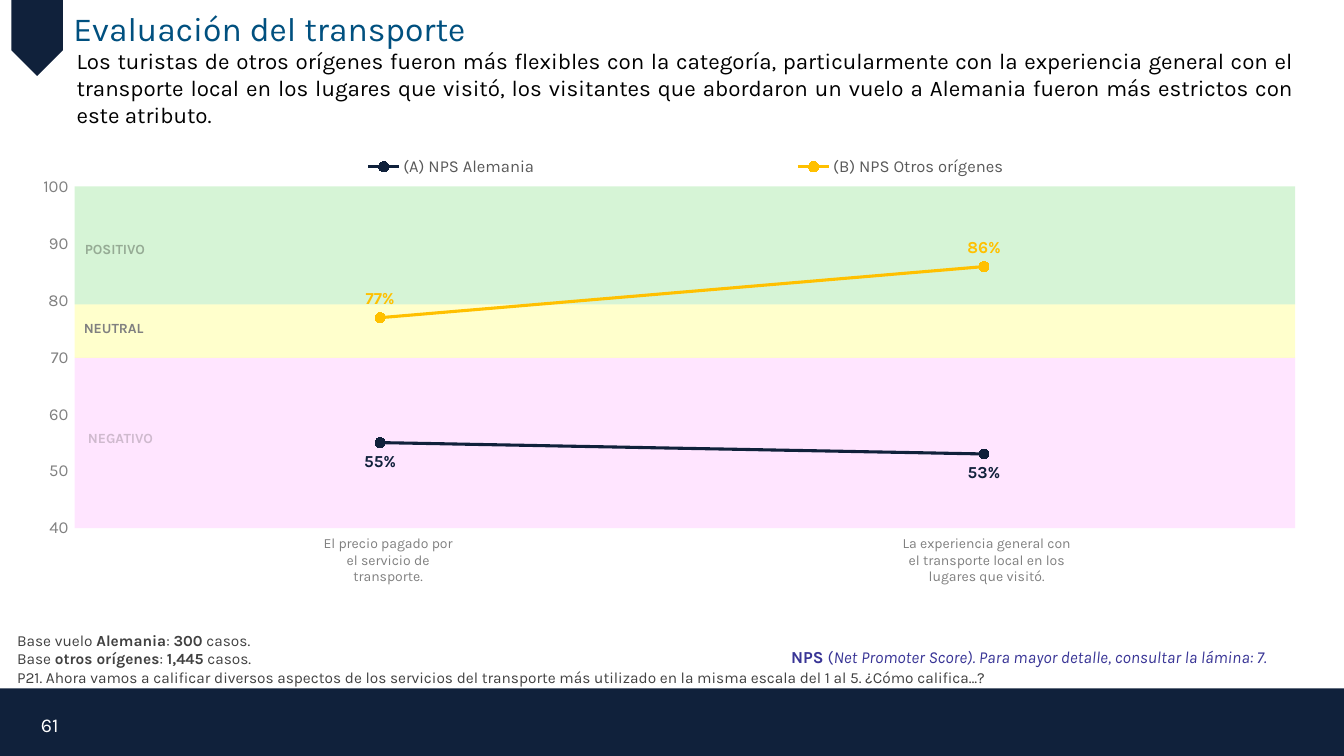
from lxml.etree import SubElement
from pptx import Presentation
from pptx.chart.data import CategoryChartData
from pptx.dml.color import RGBColor
from pptx.enum.chart import XL_CHART_TYPE, XL_LABEL_POSITION, XL_LEGEND_POSITION, XL_MARKER_STYLE, XL_TICK_MARK
from pptx.enum.shapes import MSO_SHAPE
from pptx.enum.text import MSO_ANCHOR, MSO_AUTO_SIZE, PP_ALIGN
from pptx.oxml import parse_xml
from pptx.oxml.ns import nsdecls, qn
from pptx.util import Cm, Pt

FONT = "Karla"
NAVY, GOLD, GRAY = "10213B", "FFC000", "808080"
BAND_LEFT, BAND_WIDTH = 1.88, 30.76
BANDS = [("FFCCFF", 50, 9.02, 4.29), ("FFFF00", 20, 7.67, 1.35), ("33CC33", 20, 4.7, 2.97)]
SERIES = [
    ("(A) NPS Alemania", (55, 53), NAVY, XL_LABEL_POSITION.BELOW),
    ("(B) NPS Otros orígenes", (77, 86), GOLD, XL_LABEL_POSITION.ABOVE),
]
ZONES = [
    ("NEGATIVO", "CFBACE", (1.93, 10.69, 2.21, 0.69), True),
    ("POSITIVO", "96AB95", (1.88, 5.94, 2.03, 0.69), False),
    ("NEUTRAL", GRAY, (1.8, 7.92, 2.13, 0.71), False),
]
ATTRIBUTES = [
    ("La experiencia general con el transporte local en los lugares que visitó.", (22.4, 13.34, 4.93, 1.55)),
    ("El precio pagado por el servicio de transporte.", (7.75, 13.34, 4.06, 1.55)),
]
SUMMARY = (
    "Los turistas de otros orígenes fueron más flexibles con la categoría, particularmente con la "
    "experiencia general con el transporte local en los lugares que visitó, los visitantes que "
    "abordaron un vuelo a Alemania fueron más estrictos con este atributo."
)
QUESTION = (
    "P21. Ahora vamos a calificar diversos aspectos de los servicios del transporte más utilizado "
    "en la misma escala del 1 al 5. ¿Cómo califica…?"
)


def color(code):
    """Return the colour for a hex string."""
    return RGBColor.from_string(code)


def style_font(font, size, code, bold=False, italic=False):
    """Apply the slide's typeface with a size, colour and emphasis."""
    font.name, font.size, font.bold, font.italic = FONT, Pt(size), bold, italic
    font.color.rgb = color(code)


def add_block(page, kind, place, code, opacity=100):
    """Add a filled shape without outline, optionally see-through."""
    block = page.shapes.add_shape(kind, *map(Cm, place))
    block.shadow.inherit = False
    block.fill.solid()
    block.fill.fore_color.rgb = color(code)
    block.line.fill.background()
    if opacity < 100:
        tint = block.fill._xPr.find(qn("a:solidFill"))[0]
        SubElement(tint, qn("a:alpha")).set("val", str(opacity * 1000))
    return block


def add_text(page, place, paragraphs, size, code, align=PP_ALIGN.LEFT, wrap=True):
    """Add a text box from paragraphs made of (text, emphasis) pairs."""
    box = page.shapes.add_textbox(*map(Cm, place))
    frame = box.text_frame
    frame.word_wrap = wrap
    frame.auto_size = MSO_AUTO_SIZE.SHAPE_TO_FIT_TEXT
    for index, pieces in enumerate(paragraphs):
        para = frame.add_paragraph() if index else frame.paragraphs[0]
        para.alignment = align
        for text, emphasis in pieces:
            span = para.add_run()
            span.text = text
            style_font(span.font, size, code, "b" in emphasis, "i" in emphasis)
    return box


def base_line(group, cases):
    """Return the pieces of a sample size note."""
    return [("Base ", ""), (group, "b"), (": ", ""), (cases, "b"), (" casos.", "")]


def place_chart_part(part, index, x, y, w, h, inner=False):
    """Fix the position of a chart part as fractions of the chart."""
    for layout in part.findall(qn("c:layout")):
        part.remove(layout)
    target = '<c:layoutTarget val="inner"/>' if inner else ""
    sizes = "".join(f'<c:{name} val="{value}"/>' for name, value in zip("xywh", (x, y, w, h)))
    part.insert(index, parse_xml(
        f'<c:layout {nsdecls("c")}><c:manualLayout>{target}<c:xMode val="edge"/>'
        f'<c:yMode val="edge"/>{sizes}</c:manualLayout></c:layout>'
    ))


def no_fill():
    """Return chart properties without fill or outline."""
    return parse_xml(f'<c:spPr {nsdecls("c", "a")}><a:noFill/><a:ln><a:noFill/></a:ln></c:spPr>')


def style_series(series, code, position):
    """Format the line, markers and labels of one series."""
    series.smooth = True
    series.format.line.width = Pt(2.25)
    series.format.line.color.rgb = color(code)
    marker = series.marker
    marker.style, marker.size = XL_MARKER_STYLE.CIRCLE, 7
    marker.format.fill.solid()
    marker.format.fill.fore_color.rgb = color(code)
    marker.format.line.color.rgb = color(code)
    labels = series.data_labels
    labels.show_value = True
    labels.number_format, labels.number_format_is_linked = '#"%"', False
    labels.position = position
    style_font(labels.font, 12, code, bold=True)


def add_score_chart(page):
    """Add the line chart of scores by traveller group."""
    data = CategoryChartData()
    data.categories = ["1", "2"]
    for name, values, _, _ in SERIES:
        data.add_series(name, values)
    place = map(Cm, (1.09, 3.33, 31.32, 10.26))
    chart = page.shapes.add_chart(XL_CHART_TYPE.LINE_MARKERS, *place, data).chart
    chart.font.name, chart.font.size = "Calibri", Pt(10)
    chart.font.color.rgb = color("000000")
    chart.has_title = False
    chart.has_legend = True
    chart.legend.position = XL_LEGEND_POSITION.TOP
    chart.legend.include_in_layout = False
    style_font(chart.legend.font, 12, "595959")
    chart.category_axis.visible = False
    axis = chart.value_axis
    axis.minimum_scale, axis.maximum_scale, axis.major_unit = 40, 100, 10
    axis.has_major_gridlines = False
    axis.major_tick_mark = XL_TICK_MARK.OUTSIDE
    axis.format.line.fill.background()
    axis.tick_labels.number_format, axis.tick_labels.number_format_is_linked = "0", False
    style_font(axis.tick_labels.font, 12, GRAY)
    plot = chart.plots[0]
    plot.vary_by_categories = False
    for series, (_, _, code, position) in zip(plot.series, SERIES):
        style_series(series, code, position)
    space = chart._chartSpace
    area = space.chart.plotArea
    place_chart_part(area, 0, 0.035, 0.135, 0.986, 0.837, inner=True)
    place_chart_part(chart.legend._element, 1, 0.04, 0.05, 0.94, 0.07)
    area.append(no_fill())
    space.find(qn("c:txPr")).addprevious(no_fill())


def main():
    """Build the transport evaluation slide."""
    deck = Presentation()
    deck.slide_width, deck.slide_height = Cm(33.87), Cm(19.05)
    page = deck.slides.add_slide(deck.slide_layouts[6])

    add_block(page, MSO_SHAPE.RECTANGLE, (0, 17.35, 33.87, 1.7), NAVY)
    number = add_text(page, (0.05, 17.7, 1.68, 1.12), [[("61", "")]], 14, "FFFFFF", PP_ALIGN.RIGHT)
    number.text_frame.auto_size = MSO_AUTO_SIZE.NONE
    number.text_frame.vertical_anchor = MSO_ANCHOR.MIDDLE
    add_block(page, MSO_SHAPE.PENTAGON, (-0.03, 0.3, 1.93, 1.3), NAVY).rotation = 90
    add_text(page, (1.6, 0.08, 21.21, 1.27), [[("Evaluación del transporte", "")]], 24, "00507F")

    for text, place in ATTRIBUTES:
        add_text(page, place, [[(text, "")]], 10, GRAY, PP_ALIGN.CENTER)
    for code, opacity, top, height in BANDS:
        add_block(page, MSO_SHAPE.RECTANGLE, (BAND_LEFT, top, BAND_WIDTH, height), code, opacity)
    add_score_chart(page)
    for text, code, place, wrap in ZONES:
        add_text(page, place, [[(text, "b")]], 10, code, PP_ALIGN.CENTER, wrap)

    detail = "Net Promoter Score). Para mayor detalle, consultar la lámina: 7."
    note = [("NPS", "b"), (" (", ""), (detail, "i")]
    add_text(page, (19.69, 16.18, 14.17, 0.76), [note], 12, "393596", wrap=False)
    bases = [base_line("otros orígenes", "1,445"), [(QUESTION, "")]]
    bases.insert(0, [("Base vuelo ", "")] + base_line("Alemania", "300")[1:])
    add_text(page, (0.18, 15.77, 25.68, 1.68), bases, 11, "414141")
    add_text(page, (1.68, 1.07, 31.17, 2.31), [[(SUMMARY, "")]], 16, "000000", PP_ALIGN.JUSTIFY)
    deck.save("out.pptx")


if __name__ == "__main__":
    main()
